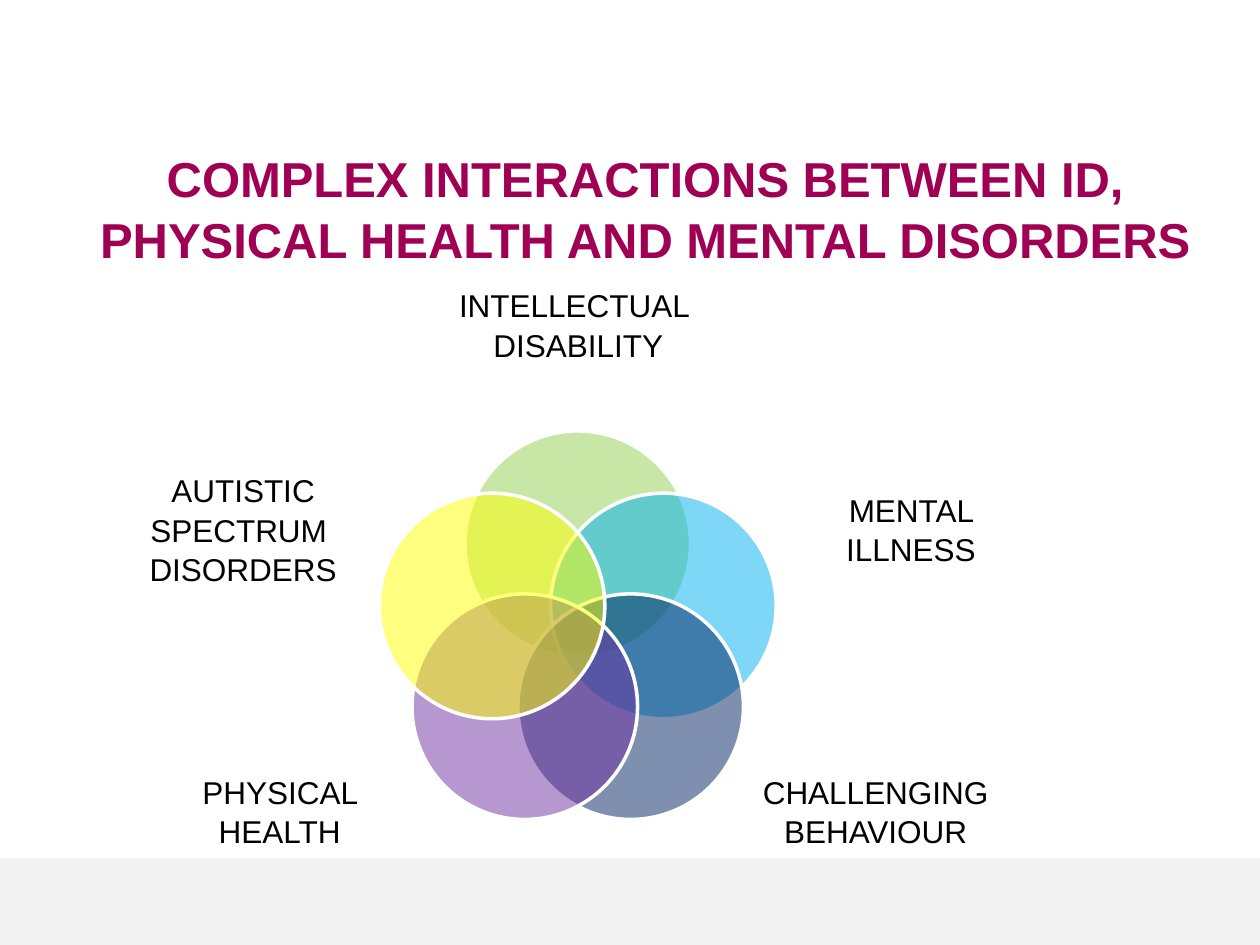
import math
from dataclasses import dataclass

from lxml import etree
from pptx import Presentation, util as u
from pptx.dml.color import RGBColor
from pptx.enum import shapes, text
from pptx.oxml.ns import qn


@dataclass(frozen=True)
class Theme:
    font: str = "Arial"
    title_size: int = 28
    label_size: int = 18
    line_spacing: float = 1.04
    title: str = "A00054"
    label: str = "000000"
    outline: str = "FFFFFF"
    band: str = "F2F2F2"
    opacity: int = 50


@dataclass(frozen=True)
class Area:
    """A rectangle in shares of the slide's width and height."""
    left: float
    top: float
    width: float
    height: float


@dataclass(frozen=True)
class Topic:
    lines: tuple[str, ...]
    color: str
    label: Area


THEME = Theme()
WIDTH, HEIGHT = u.Inches(10), u.Inches(7.5)

# Ring of circles, in inches
CENTER_X, CENTER_Y = 4.585, 5.03
RING_RADIUS, CIRCLE_SIZE = 0.715, 1.79

TITLE_AREA = Area(0.05, 0.148, 0.924, 0.139)
BAND_AREA = Area(0, 0.908, 1, 0.092)


def side_label(left: float, top: float) -> Area:
    return Area(left, top, 0.186, 0.173)


UPPER, LOWER = 0.473, 0.771

# Clockwise from the top
TOPICS = (
    Topic(("INTELLECTUAL ", "DISABILITY"), "92D050", Area(0.355, 0.263, 0.208, 0.16)),
    Topic(("MENTAL ILLNESS",), "00B0F0", side_label(0.63, UPPER)),
    Topic(("CHALLENGING BEHAVIOUR",), "002060", side_label(0.602, LOWER)),
    Topic(("PHYSICAL HEALTH",), "7030A0", side_label(0.129, LOWER)),
    Topic(("AUTISTIC SPECTRUM ", "DISORDERS"), "FFFF00", side_label(0.1, UPPER)),
)


def place(area: Area) -> tuple[int, int, int, int]:
    return (int(area.left * WIDTH), int(area.top * HEIGHT),
            int(area.width * WIDTH), int(area.height * HEIGHT))


def write(frame, lines: tuple[str, ...], size: int, color: str, bold: bool = False) -> None:
    frame.word_wrap = True
    for index, line in enumerate(lines):
        para = frame.paragraphs[0] if index == 0 else frame.add_paragraph()
        para.alignment = text.PP_ALIGN.CENTER
        para.line_spacing = THEME.line_spacing
        span = para.add_run()
        span.text = line
        span.font.name = THEME.font
        span.font.size = u.Pt(size)
        span.font.bold = bold
        span.font.color.rgb = RGBColor.from_string(color)


def fill(shape, color: str) -> None:
    shape.shadow.inherit = False
    shape.fill.solid()
    shape.fill.fore_color.rgb = RGBColor.from_string(color)


def add_band(page) -> None:
    band = page.shapes.add_shape(shapes.MSO_SHAPE.RECTANGLE, *place(BAND_AREA))
    fill(band, THEME.band)
    band.line.fill.background()


def add_circle(page, topic: Topic, angle: float) -> None:
    left = CENTER_X + RING_RADIUS * math.sin(angle) - CIRCLE_SIZE / 2
    top = CENTER_Y - RING_RADIUS * math.cos(angle) - CIRCLE_SIZE / 2
    size = u.Inches(CIRCLE_SIZE)
    circle = page.shapes.add_shape(
        shapes.MSO_SHAPE.OVAL, u.Inches(left), u.Inches(top), size, size)
    fill(circle, topic.color)
    color = circle.fill._xPr.find(qn("a:solidFill"))[0]
    etree.SubElement(color, qn("a:alpha")).set("val", str(THEME.opacity * 1000))
    circle.line.color.rgb = RGBColor.from_string(THEME.outline)
    circle.line.width = u.Pt(2)


def add_label(page, topic: Topic) -> None:
    box = page.shapes.add_textbox(*place(topic.label))
    frame = box.text_frame
    frame.margin_left = frame.margin_right = frame.margin_top = frame.margin_bottom = 0
    frame.vertical_anchor = text.MSO_ANCHOR.MIDDLE
    write(frame, topic.lines, THEME.label_size, THEME.label)


def add_title(page, line: str) -> None:
    title = page.shapes.title
    title.left, title.top, title.width, title.height = place(TITLE_AREA)
    title.text_frame.vertical_anchor = text.MSO_ANCHOR.TOP
    title.text_frame.auto_size = text.MSO_AUTO_SIZE.SHAPE_TO_FIT_TEXT
    write(title.text_frame, (line,), THEME.title_size, THEME.title, bold=True)


def main() -> None:
    deck = Presentation()
    deck.slide_width, deck.slide_height = WIDTH, HEIGHT
    page = deck.slides.add_slide(deck.slide_layouts[5])  # title only

    add_band(page)
    add_title(page, "COMPLEX INTERACTIONS BETWEEN ID, PHYSICAL HEALTH AND MENTAL DISORDERS")

    # Overlapping circles with their labels
    for index, topic in enumerate(TOPICS):
        add_circle(page, topic, index * math.tau / len(TOPICS))
        add_label(page, topic)

    deck.save("out.pptx")


if __name__ == "__main__":
    main()
